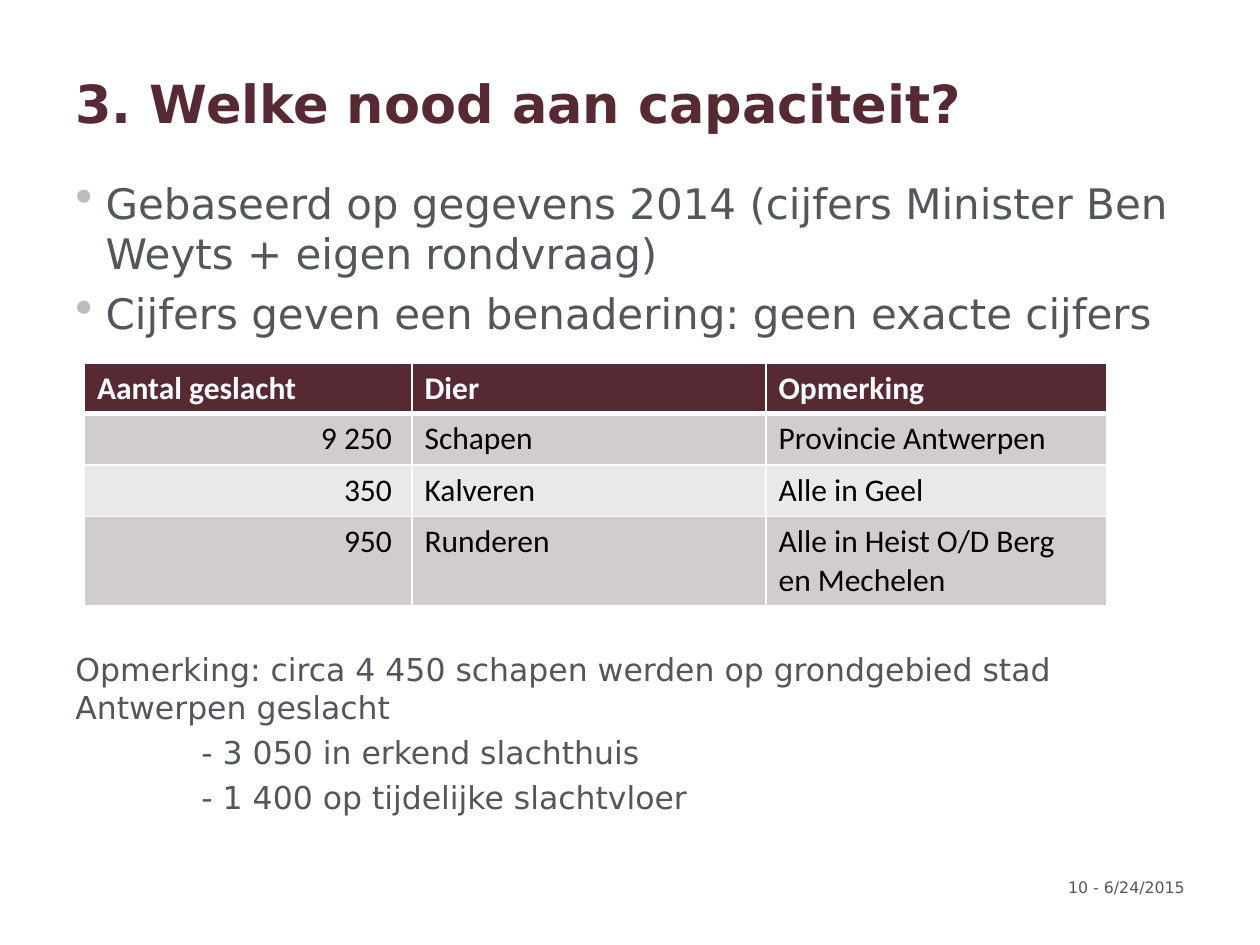
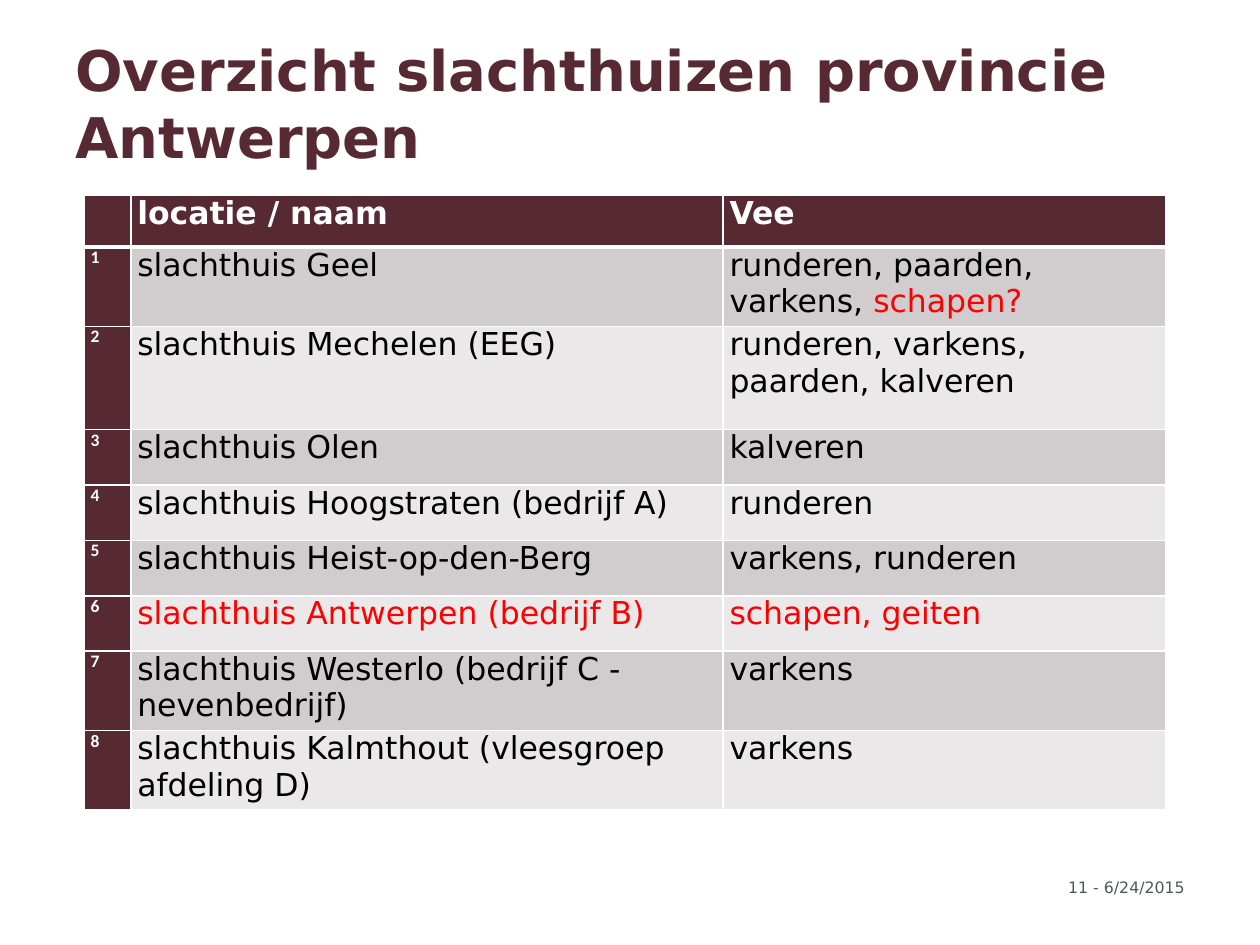
from dataclasses import dataclass
from typing import NamedTuple, Sequence

from lxml.etree import SubElement
from pptx import Presentation
from pptx.dml.color import RGBColor
from pptx.enum.text import MSO_ANCHOR as Anchor, PP_ALIGN as Align
from pptx.oxml.ns import qn
from pptx.util import Inches, Pt

SLIDE_WIDTH, SLIDE_HEIGHT = Inches(10), Inches(7.5)
GRID_COLUMNS, GRID_ROWS = 20, 15


class Style(NamedTuple):
    """Type size, colour, font and weight of a run."""
    size: float
    color: str
    font: str = "DejaVu Sans"
    bold: bool = False


@dataclass(frozen=True)
class Theme:
    """Colours and type styles shared by the slides."""
    brand: str = "572932"
    rule: str = "FFFFFF"
    bullet: str = "BBBCBC"
    alert: str = "FF0000"
    bands: tuple[str, str] = ("D1CDCE", "EAE8E8")
    title: Style = Style(30, "572932", bold=True)
    large_title: Style = Style(32, "572932", bold=True)
    bullets: Style = Style(24, "53565A")
    remark: Style = Style(18, "53565A")
    footer: Style = Style(9, "53565A")
    figures_head: Style = Style(18, "FFFFFF", "Calibri", True)
    figures: Style = Style(18, "000000", "Calibri")
    sites_head: Style = Style(18, "FFFFFF", bold=True)
    sites: Style = Style(18, "000000")
    flagged: Style = Style(18, "FF0000")
    number: Style = Style(10, "FFFFFF", "Calibri", True)


THEME = Theme()


class Box(NamedTuple):
    """Place on the slide in grid columns and rows."""
    column: float
    row: float
    columns: float
    rows: float


class Line(NamedTuple):
    """Paragraph of a text box."""
    text: str
    indent: float = 0
    bullet: bool = False


class Cell(NamedTuple):
    """Content and look of a table cell."""
    text: str
    style: Style
    fill: str
    align: Align = Align.LEFT
    highlight: str = ""


class Insets(NamedTuple):
    """Cell margins in inches."""
    side: float = 0.1
    vertical: float = 0.05


class Site(NamedTuple):
    """Slaughterhouse and the livestock it takes."""
    name: str
    livestock: str
    highlight: str = ""
    flagged: bool = False


TITLE_BOX = Box(1, 1, 18, 1.26)
FOOTER_BOX = Box(5.16, 13.84, 13.84, 0.54)
BULLETS = [
    Line("Gebaseerd op gegevens 2014 (cijfers Minister Ben Weyts + eigen rondvraag)", 0.24, True),
    Line("Cijfers geven een benadering: geen exacte cijfers", 0.24, True),
]
REMARKS = [
    Line("Opmerking: circa 4 450 schapen werden op grondgebied stad Antwerpen geslacht"),
    Line("- 3 050 in erkend slachthuis", 1),
    Line("- 1 400 op tijdelijke slachtvloer", 1),
]
FIGURES = [
    ("9 250", "Schapen", "Provincie Antwerpen"),
    ("350", "Kalveren", "Alle in Geel"),
    ("950", "Runderen", "Alle in Heist O/D Berg en Mechelen"),
]
SITES = [
    Site("Geel", "runderen, paarden, varkens, ", highlight="schapen?"),
    Site("Mechelen (EEG)", "runderen, varkens, paarden, kalveren"),
    Site("Olen", "kalveren"),
    Site("Hoogstraten (bedrijf A)", "runderen"),
    Site("Heist-op-den-Berg", "varkens, runderen"),
    Site("Antwerpen (bedrijf B)", "schapen, geiten", flagged=True),
    Site("Westerlo (bedrijf C - nevenbedrijf)", "varkens"),
    Site("Kalmthout (vleesgroep afdeling D)", "varkens"),
]


def across(columns: float) -> int:
    """Width of a number of grid columns."""
    return round(SLIDE_WIDTH * columns / GRID_COLUMNS)


def down(rows: float) -> int:
    """Height of a number of grid rows."""
    return round(SLIDE_HEIGHT * rows / GRID_ROWS)


def place(box: Box) -> tuple[int, int, int, int]:
    """Left, top, width and height of a box."""
    return across(box.column), down(box.row), across(box.columns), down(box.rows)


def format_run(run, style: Style) -> None:
    """Apply a style to a run."""
    run.font.size = Pt(style.size)
    run.font.name = style.font
    run.font.bold = style.bold
    run.font.color.rgb = RGBColor.from_string(style.color)


def set_indent(paragraph, line: Line) -> None:
    """Indent a paragraph and give it its bullet."""
    properties = paragraph._p.get_or_add_pPr()
    properties.set("marL", str(Inches(line.indent)))
    if line.bullet:
        properties.set("indent", str(-Inches(line.indent)))
        color = SubElement(properties, qn("a:buClr"))
        SubElement(color, qn("a:srgbClr"), val=THEME.bullet)
        SubElement(properties, qn("a:buSzPct"), val="120000")
        SubElement(properties, qn("a:buChar"), char="•")


def add_text(slide, box: Box, lines: Sequence[Line], style: Style,
             align: Align = Align.LEFT, anchor: Anchor = Anchor.TOP) -> None:
    """Add a text box with one paragraph per line."""
    text_frame = slide.shapes.add_textbox(*place(box)).text_frame
    text_frame.word_wrap = True
    text_frame.vertical_anchor = anchor
    text_frame.text = "\n".join(line.text for line in lines)
    for index, (paragraph, line) in enumerate(zip(text_frame.paragraphs, lines)):
        set_indent(paragraph, line)
        paragraph.alignment = align
        if index:
            paragraph.space_before = Pt(round(style.size * 0.23, 1))
        format_run(paragraph.runs[0], style)


def add_borders(cell, row: int) -> None:
    """Rule a cell, with a heavier line below the heading row."""
    properties = cell._tc.get_or_add_tcPr()
    widths = {"L": 1, "R": 1, "T": 3 if row == 1 else 1, "B": 3 if row == 0 else 1}
    for side, width in widths.items():
        line = SubElement(properties, qn(f"a:ln{side}"), w=str(Pt(width)))
        SubElement(SubElement(line, qn("a:solidFill")), qn("a:srgbClr"), val=THEME.rule)


def fill_cell(cell, content: Cell, insets: Insets) -> None:
    """Write and colour a table cell."""
    cell.fill.solid()
    cell.fill.fore_color.rgb = RGBColor.from_string(content.fill)
    cell.margin_left = cell.margin_right = Inches(insets.side)
    cell.margin_top = cell.margin_bottom = Inches(insets.vertical)
    if content.align == Align.RIGHT:
        cell.margin_right = Inches(insets.side + 0.06)
    paragraph = cell.text_frame.paragraphs[0]
    paragraph.text = content.text
    paragraph.alignment = content.align
    for run in paragraph.runs:
        format_run(run, content.style)
    if content.highlight:
        run = paragraph.add_run()
        run.text = content.highlight
        format_run(run, content.style._replace(color=THEME.alert))


def add_grid(slide, column: float, row: float, widths: Sequence[float],
             heights: Sequence[float], contents: Sequence[Sequence[Cell]],
             insets: Insets = Insets()) -> None:
    """Add a table whose widths and heights are grid columns and rows."""
    box = Box(column, row, sum(widths), sum(heights))
    table = slide.shapes.add_table(len(heights), len(widths), *place(box)).table
    table.horz_banding = False
    for table_column, width in zip(table.columns, widths):
        table_column.width = across(width)
    for row_index, (height, cells) in enumerate(zip(heights, contents)):
        table.rows[row_index].height = down(height)
        for column_index, content in enumerate(cells):
            cell = table.cell(row_index, column_index)
            add_borders(cell, row_index)
            fill_cell(cell, content, insets)


def heading(labels: Sequence[str], style: Style) -> list[Cell]:
    """Cells of a heading row."""
    return [Cell(label, style, THEME.brand) for label in labels]


def add_page(presentation, number: int, title: str, style: Style):
    """Add a blank slide with its title and footer."""
    slide = presentation.slides.add_slide(presentation.slide_layouts[6])
    add_text(slide, TITLE_BOX, [Line(title)], style, anchor=Anchor.MIDDLE)
    add_text(slide, FOOTER_BOX, [Line(f"{number} - 6/24/2015")], THEME.footer, Align.RIGHT)
    return slide


def add_capacity_slide(presentation) -> None:
    """Show the numbers of slaughtered animals."""
    slide = add_page(presentation, 10, "3. Welke nood aan capaciteit?", THEME.title)
    add_text(slide, Box(1, 2.72, 18.76, 2.8), BULLETS, THEME.bullets)
    contents = [heading(("Aantal geslacht", "Dier", "Opmerking"), THEME.figures_head)]
    for index, (count, animal, note) in enumerate(FIGURES):
        band = THEME.bands[index % 2]
        contents.append([
            Cell(count, THEME.figures, band, Align.RIGHT),
            Cell(animal, THEME.figures, band),
            Cell(note, THEME.figures, band),
        ])
    add_grid(slide, 1.34, 5.76, (5.2, 5.62, 5.4), (0.8, 0.82, 0.82, 1.42), contents)
    add_text(slide, Box(1, 10.22, 18.76, 2.8), REMARKS, THEME.remark)


def add_sites_slide(presentation) -> None:
    """List the slaughterhouses of the province."""
    slide = add_page(presentation, 11, "Overzicht slachthuizen provincie Antwerpen",
                     THEME.large_title)
    contents = [heading(("", "locatie / naam", "Vee"), THEME.sites_head)]
    for index, site in enumerate(SITES):
        band = THEME.bands[index % 2]
        style = THEME.flagged if site.flagged else THEME.sites
        contents.append([
            Cell(str(index + 1), THEME.number, THEME.brand),
            Cell(f"slachthuis {site.name}", style, band),
            Cell(site.livestock, style, band, highlight=site.highlight),
        ])
    heights = (0.82, 1.26, 1.64, *[0.88] * 4, 1.26, 1.26)
    add_grid(slide, 1.34, 3.1, (0.74, 9.4, 7.02), heights, contents, Insets(0.05, 0))


def main() -> None:
    """Build and save the presentation."""
    presentation = Presentation()
    presentation.slide_width, presentation.slide_height = SLIDE_WIDTH, SLIDE_HEIGHT
    add_capacity_slide(presentation)
    add_sites_slide(presentation)
    presentation.save("out.pptx")


if __name__ == "__main__":
    main()
